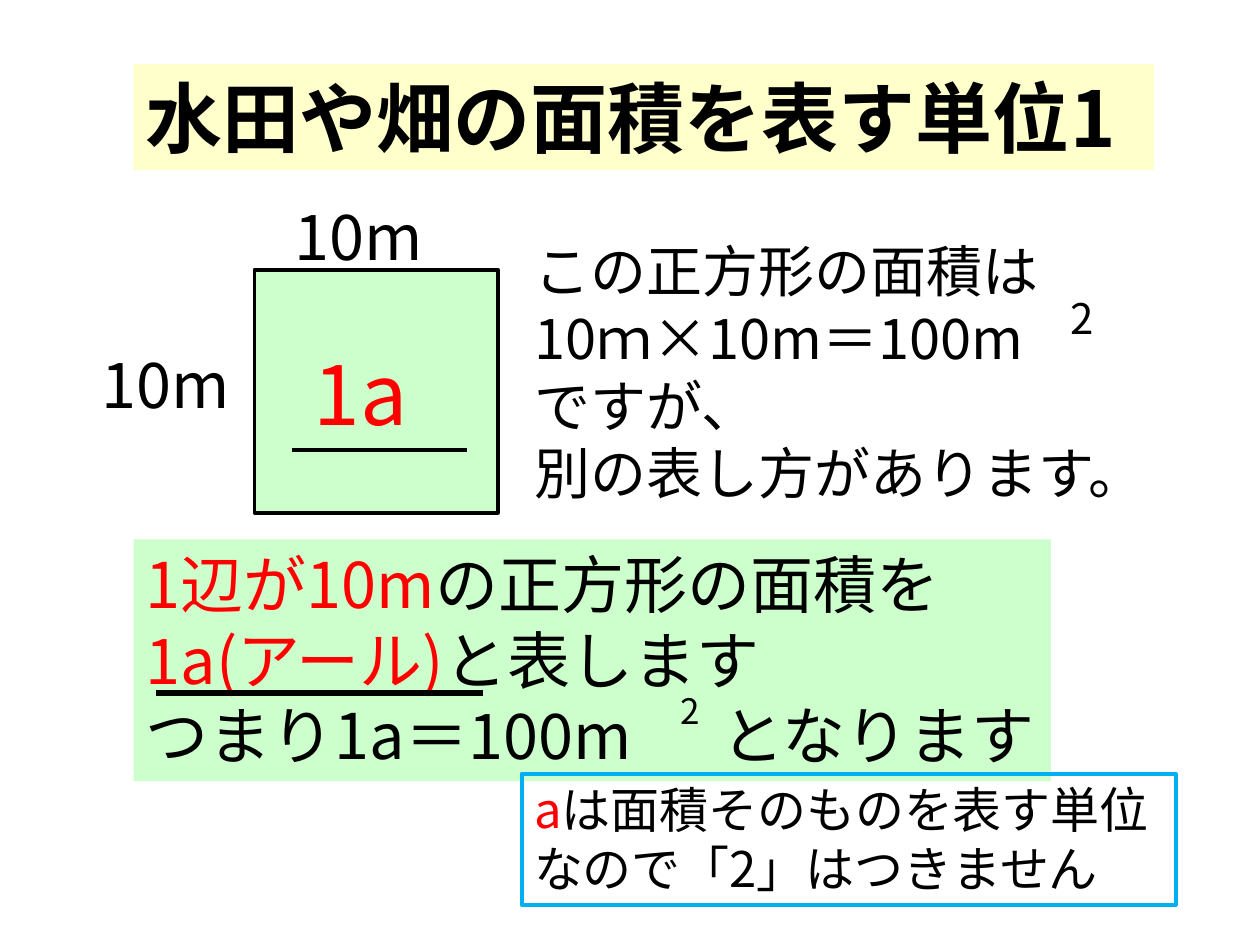
from lxml import etree
from pptx import Presentation
from pptx.dml.color import RGBColor
from pptx.enum.shapes import MSO_CONNECTOR, MSO_SHAPE
from pptx.enum.text import MSO_ANCHOR, PP_ALIGN
from pptx.oxml.ns import qn
from pptx.util import Inches, Pt

RECT = MSO_SHAPE.RECTANGLE
STRAIGHT = MSO_CONNECTOR.STRAIGHT
TOP = MSO_ANCHOR.TOP
LEFT = PP_ALIGN.LEFT
BLACK = RGBColor(0x00, 0x00, 0x00)
RED = RGBColor(0xFF, 0x00, 0x00)
GREEN = RGBColor(0xCC, 0xFF, 0xCC)
CREAM = RGBColor(0xFF, 0xFF, 0xCC)
BLUE = RGBColor(0x00, 0xB0, 0xF0)
FONT = "Noto Sans CJK JP"
LINE_HEIGHT = 1.2


def write(s, size, paragraphs, bold=False):
    """Fill a shape with paragraphs, each a list of (text, colour) runs."""
    tf = s.text_frame
    tf.word_wrap = True
    tf.vertical_anchor = TOP
    tf.margin_right = Inches(0)
    for i, runs in enumerate(paragraphs):
        p = tf.add_paragraph() if i else tf.paragraphs[0]
        p.alignment = LEFT
        p.line_spacing = Pt(size * LINE_HEIGHT)
        for text, color in runs:
            r = p.add_run()
            r.text = text
            r.font.size = Pt(size)
            r.font.bold = bold
            r.font.name = FONT
            r.font.color.rgb = color
            ea = etree.SubElement(r.font._element, qn("a:ea"))
            ea.set("typeface", FONT)


def add_tab_stop(p, position):
    """Give a paragraph one left tab stop."""
    tabs = etree.SubElement(p._p.get_or_add_pPr(), qn("a:tabLst"))
    etree.SubElement(tabs, qn("a:tab"), pos=str(Inches(position)), algn="l")


def add_text(slide, box, size, paragraphs):
    """Add a text box."""
    s = slide.shapes.add_textbox(*map(Inches, box))
    write(s, size, paragraphs)


def add_box(slide, box, fill=None, line=None):
    """Add a rectangle with an optional fill and outline."""
    s = slide.shapes.add_shape(RECT, *map(Inches, box))
    s.shadow.inherit = False
    if fill is None:
        s.fill.background()
    else:
        s.fill.solid()
        s.fill.fore_color.rgb = fill
    if line is None:
        s.line.fill.background()
    else:
        s.line.color.rgb = line
        s.line.width = Pt(2.25)
    return s


def add_rule(slide, left, right, y, width):
    """Add a horizontal black line."""
    s = slide.shapes.add_connector(STRAIGHT, *map(Inches, (left, y, right, y)))
    s.line.color.rgb = BLACK
    s.line.width = Pt(width)
    etree.SubElement(s._element.spPr, qn("a:effectLst"))


def main():
    """Build the slide about the are as a unit of area."""
    prs = Presentation()
    prs.slide_width, prs.slide_height = Inches(10), Inches(7.5)
    slide = prs.slides.add_slide(prs.slide_layouts[6])

    explanation = ["この正方形の面積は", "10ｍ×10m＝100m", "ですが、", "別の表し方があります。"]
    add_text(slide, (4.14, 1.83, 5.11, 2.26), 32, [[(t, BLACK)] for t in explanation])
    add_box(slide, (2.02, 2.14, 1.93, 1.93), GREEN, BLACK)

    title = add_box(slide, (1.06, 0.51, 8.1, 0.84), CREAM)
    write(title, 44, [[("水田や畑の面積を表す単位1", BLACK)]], bold=True)

    add_text(slide, (8.4, 2.27, 0.56, 0.5), 24, [[("2", BLACK)]])
    for box in ((2.24, 1.52, 1.47, 0.71), (0.71, 2.69, 1.35, 0.71)):
        add_text(slide, box, 36, [[("10m", BLACK)]])

    definition = add_box(slide, (1.06, 4.28, 7.28, 1.92), GREEN)
    write(definition, 36, [
        [("1辺が10m", RED), ("の正方形の面積を", BLACK)],
        [("1a(アール)", RED), ("と表します", BLACK)],
        [("つまり1a＝100m\tとなります", BLACK)],
    ])
    add_tab_stop(definition.text_frame.paragraphs[-1], 4.57)
    add_text(slide, (5.3, 5.42, 0.5, 0.44), 20, [[("2", BLACK)]])

    note = add_box(slide, (4.14, 6.14, 5.19, 1.04), line=BLUE)
    write(note, 28, [
        [("a", RED), ("は面積そのものを表す単位", BLACK)],
        [("なので「2」はつきません", BLACK)],
    ])

    add_text(slide, (2.39, 2.66, 1.18, 0.91), 48, [[("1a", RED)]])
    add_rule(slide, 2.32, 3.71, 3.57, 2.25)
    add_rule(slide, 1.24, 3.83, 5.5, 3)
    prs.save("out.pptx")


if __name__ == "__main__":
    main()
